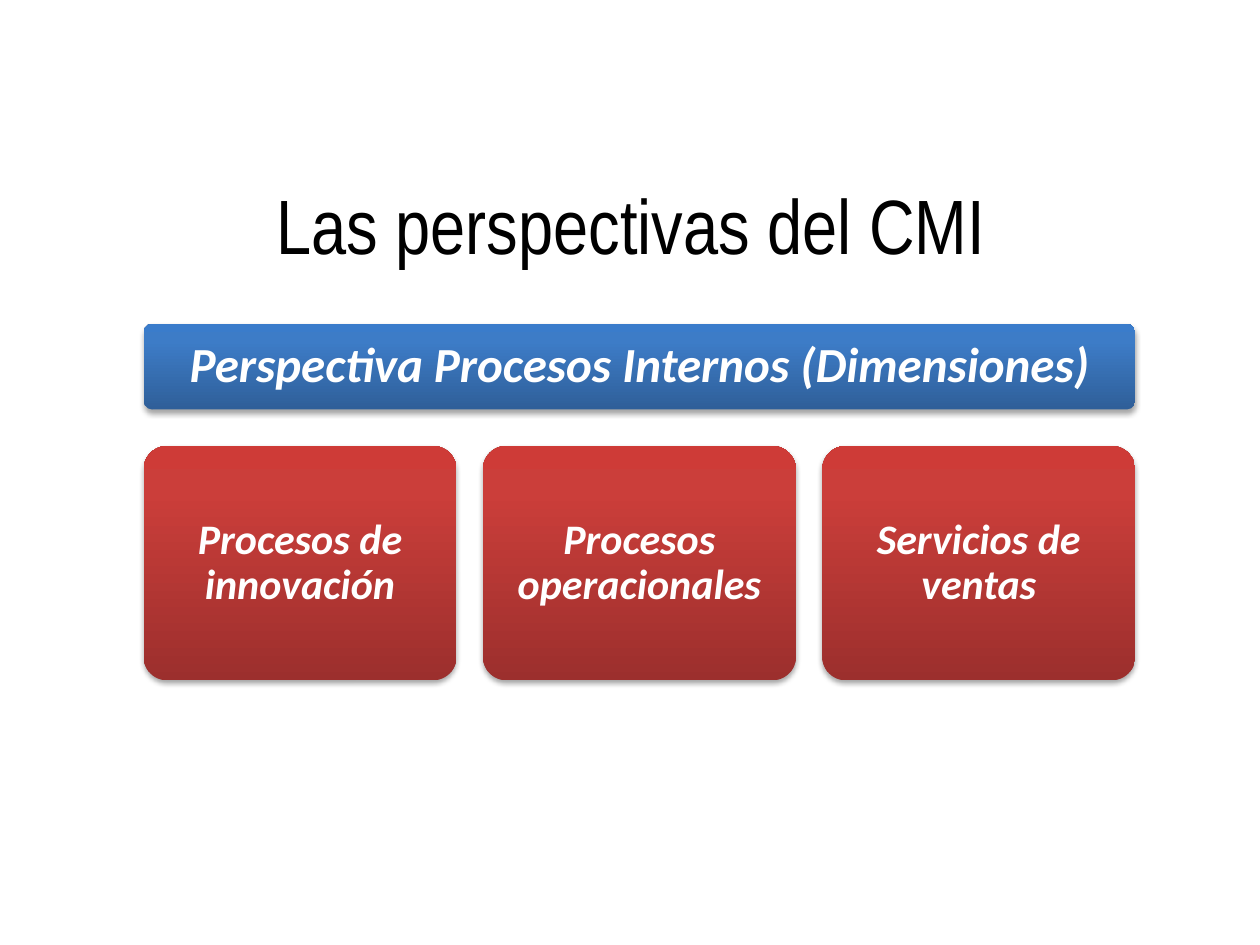
"""Build the slide on the internal process perspective of the CMI."""
from copy import deepcopy
from dataclasses import dataclass

from lxml.etree import SubElement
from pptx import Presentation
from pptx.dml.color import RGBColor
from pptx.enum.shapes import MSO_SHAPE
from pptx.enum.text import MSO_ANCHOR, PP_ALIGN
from pptx.oxml.ns import qn
from pptx.util import Inches, Pt

WIDE, HIGH = Inches(10), Inches(7.5)
LEFT, SPAN, COLS, GAP = Inches(1.14), Inches(7.87), 3, Inches(0.21)
COL = (SPAN - GAP * (COLS - 1)) // COLS
BLACK = RGBColor(0, 0, 0)
WHITE = RGBColor(255, 255, 255)
BLUES = (RGBColor(0x2F, 0x5F, 0x99), RGBColor(0x3D, 0x7C, 0xC7), RGBColor(0x3A, 0x7C, 0xCB))
REDS = (RGBColor(0x9C, 0x2F, 0x2D), RGBColor(0xCB, 0x3E, 0x3A), RGBColor(0xCE, 0x3B, 0x37))
STOPS = (0, 0.8, 1)
HEAD = {"name": "Arial Narrow", "size": Pt(44)}
BOLD = {"name": "Calibri", "bold": True, "italic": True}


@dataclass(frozen=True)
class Row:
    """A band of equal cards; top and tall are in inches."""
    top: float
    tall: float
    span: int
    size: int
    inset: float
    tones: tuple[RGBColor, ...]
    words: tuple[str, ...]


ROWS = (
    Row(2.57, 0.68, COLS, 28, 0.14, BLUES, ("Perspectiva Procesos Internos (Dimensiones)",)),
    Row(3.54, 1.86, 1, 24, 0.15, REDS,
        ("Procesos de innovación", "Procesos operacionales", "Servicios de ventas")),
)


def write(shape, text: str, tone: RGBColor, form: dict, lead: float = 1.0) -> None:
    """Put centred text in a shape."""
    frame = shape.text_frame
    frame.word_wrap = True
    frame.vertical_anchor = MSO_ANCHOR.MIDDLE
    para = frame.paragraphs[0]
    para.alignment, para.line_spacing = PP_ALIGN.CENTER, lead
    run = para.add_run()
    run.text = text
    for key, value in form.items():
        setattr(run.font, key, value)
    run.font.color.rgb = tone


def shade(shape, tones: tuple[RGBColor, ...]) -> None:
    """Give a shape its upward gradient and soft drop shadow."""
    fill = shape.fill
    fill.gradient()
    fill.gradient_angle = 90
    props = shape.element.spPr
    stops = props.find(".//" + qn("a:gsLst"))
    stops.append(deepcopy(stops[0]))
    for stop, place, tone in zip(fill.gradient_stops, STOPS, tones):
        stop.position, stop.color.rgb = place, tone
    shape.line.fill.background()
    shape.shadow.inherit = False
    drop = SubElement(props.find(qn("a:effectLst")), qn("a:outerShdw"), blurRad=str(Pt(3.1)),
                      dist=str(Pt(1.8)), dir="5400000", rotWithShape="0")
    ink = SubElement(drop, qn("a:srgbClr"), val=str(BLACK))
    SubElement(ink, qn("a:alpha"), val="35000")


def draw(slide, row: Row) -> None:
    """Draw every card of a row on the column grid."""
    wide = COL * row.span + GAP * (row.span - 1)
    for spot, text in enumerate(row.words):
        card = slide.shapes.add_shape(
            MSO_SHAPE.ROUNDED_RECTANGLE, LEFT + spot * (wide + GAP),
            Inches(row.top), wide, Inches(row.tall))
        card.adjustments[0] = 0.1
        shade(card, row.tones)
        for side in ("left", "top", "right", "bottom"):
            setattr(card.text_frame, f"margin_{side}", Inches(row.inset))
        write(card, text, WHITE, BOLD | {"size": Pt(row.size)}, 0.9)


def main() -> None:
    """Build and save the slide."""
    deck = Presentation()
    deck.slide_width, deck.slide_height = WIDE, HIGH
    slide = deck.slides.add_slide(deck.slide_layouts[6])
    title = slide.shapes.add_textbox(Inches(0.51), Inches(1.15), int(WIDE * 0.9), HIGH // 6)
    write(title, "Las perspectivas del CMI", BLACK, HEAD)
    for row in ROWS:
        draw(slide, row)
    deck.save("out.pptx")


if __name__ == "__main__":
    main()
